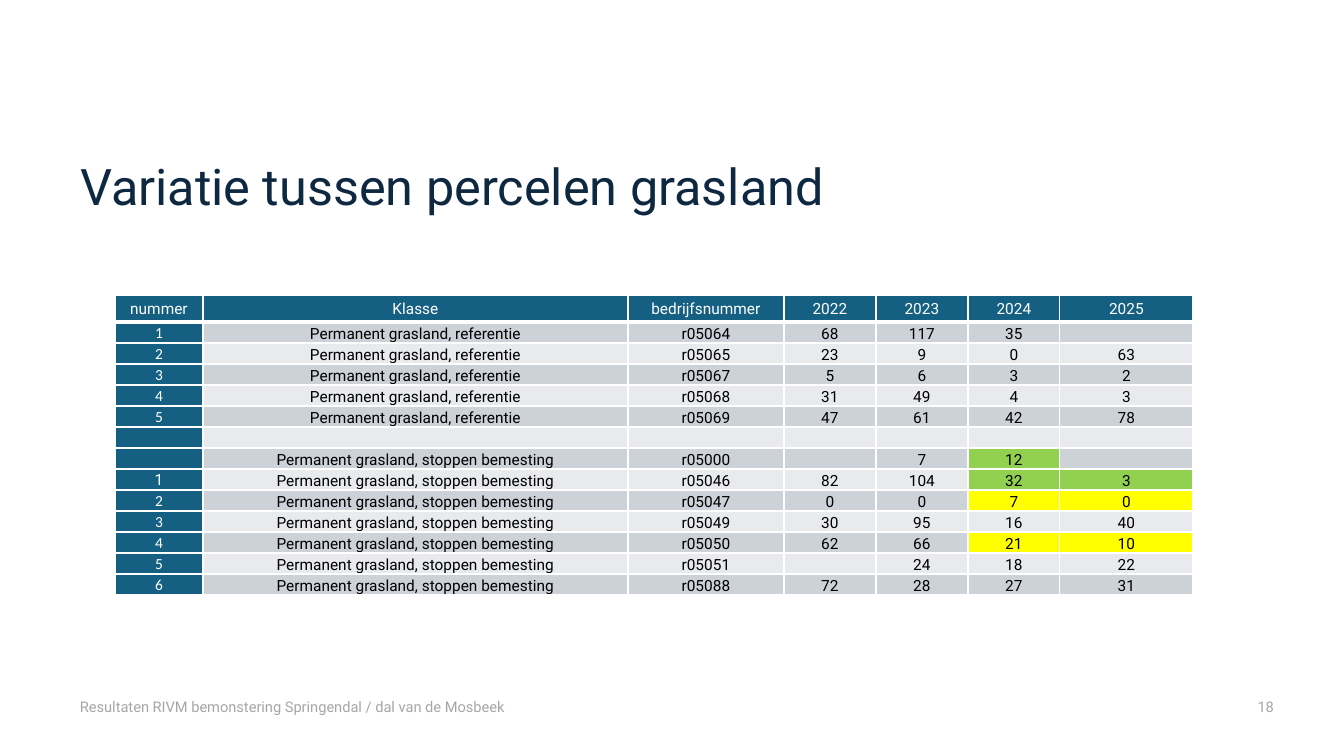
from pptx import Presentation
from pptx.dml.color import RGBColor
from pptx.enum.text import MSO_ANCHOR as ANCHOR, PP_ALIGN as ALIGN
from pptx.oxml import parse_xml
from pptx.oxml.ns import nsdecls
from pptx.util import Emu, Pt

COLORS = {
    "title": "0E2841", "footer": "A6A6A6", "head": "156082",
    "white": "FFFFFF", "black": "000000", "odd": "CCD2D8",
    "even": "E8EAED", "green": "92D050", "yellow": "FFFF00",
}
REFERENCE = "Permanent grasland, referentie"
STOPPED = "Permanent grasland, stoppen bemesting"
ROWS = [
    ["nummer", "Klasse", "bedrijfsnummer", "2022", "2023", "2024", "2025"],
    ["1", REFERENCE, "r05064", "68", "117", "35", ""],
    ["2", REFERENCE, "r05065", "23", "9", "0", "63"],
    ["3", REFERENCE, "r05067", "5", "6", "3", "2"],
    ["4", REFERENCE, "r05068", "31", "49", "4", "3"],
    ["5", REFERENCE, "r05069", "47", "61", "42", "78"],
    [""] * 7,
    ["", STOPPED, "r05000", "", "7", "12", ""],
    ["1", STOPPED, "r05046", "82", "104", "32", "3"],
    ["2", STOPPED, "r05047", "0", "0", "7", "0"],
    ["3", STOPPED, "r05049", "30", "95", "16", "40"],
    ["4", STOPPED, "r05050", "62", "66", "21", "10"],
    ["5", STOPPED, "r05051", "", "24", "18", "22"],
    ["6", STOPPED, "r05088", "72", "28", "27", "31"],
]
HIGHLIGHTS = {
    (7, 5): "green", (8, 5): "green", (8, 6): "green",
    (9, 5): "yellow", (9, 6): "yellow", (11, 5): "yellow", (11, 6): "yellow",
}
COL_WIDTHS = [88, 425, 156, 92, 92, 92, 133]
HEAD_HEIGHT, ROW_HEIGHT = 27, 21
ROBOTO_NUMBER_ROW = 8


def px(n):
    """Convert pixels, 100.8 to the inch, to EMU."""
    return Emu(round(n * 914400 / 100.8))


def rgb(name):
    return RGBColor.from_string(COLORS[name])


def style(p, size, color, font="Roboto", align=ALIGN.LEFT):
    p.alignment = align
    for r in p.runs:
        r.font.size, r.font.name = Pt(size), font
        r.font.color.rgb = rgb(color)


def add_title(s, box, text):
    sp = s.shapes.title
    sp.left, sp.top, sp.width, sp.height = map(px, box)
    tf = sp.text_frame
    tf.text = text
    tf.vertical_anchor = ANCHOR.BOTTOM
    p = tf.paragraphs[0]
    p.line_spacing = 0.9
    style(p, 36, "title")


def add_footer(s, box, text, align=ALIGN.LEFT):
    tf = s.shapes.add_textbox(*map(px, box)).text_frame
    tf.word_wrap = True
    tf.vertical_anchor = ANCHOR.BOTTOM
    if align == ALIGN.RIGHT:
        tf.margin_right = 0
    tf.text = text
    style(tf.paragraphs[0], 10.5, "footer", align=align)


def add_borders(cell, bottom):
    """Draw white cell borders, 1 pt wide except for the bottom one."""
    tc_pr = cell._tc.get_or_add_tcPr()
    for i, (side, width) in enumerate(zip("LRTB", (1, 1, 1, bottom))):
        tc_pr.insert(i, parse_xml(
            f'<a:ln{side} {nsdecls("a")} w="{Pt(width)}"><a:solidFill>'
            f'<a:srgbClr val="{COLORS["white"]}"/></a:solidFill></a:ln{side}>'))


def fill_cell(cell, row, col, text):
    is_head = row == 0 or col == 0
    band = "head" if is_head else "odd" if row % 2 else "even"
    cell.fill.solid()
    cell.fill.fore_color.rgb = rgb(HIGHLIGHTS.get((row, col), band))
    add_borders(cell, 3 if row == 0 else 1)
    cell.margin_left = cell.margin_right = px(5 if is_head else 1)
    cell.margin_top = px(0 if is_head else 1)
    cell.margin_bottom = 0
    cell.vertical_anchor = ANCHOR.MIDDLE if is_head else ANCHOR.BOTTOM
    p = cell.text_frame.paragraphs[0]
    if not text:
        p._p.append(parse_xml(f'<a:endParaRPr {nsdecls("a")} sz="1100"/>'))
        return
    p.text = text
    if is_head:
        p.line_spacing, p.space_after = 1.07, Pt(8)
    is_calibri = col == 0 and row not in (0, ROBOTO_NUMBER_ROW)
    style(p, 11, "white" if is_head else "black",
          "Calibri" if is_calibri else "Roboto", ALIGN.CENTER)


def add_parcel_table(s, left, top):
    heights = [HEAD_HEIGHT] + [ROW_HEIGHT] * (len(ROWS) - 1)
    box = (left, top, sum(COL_WIDTHS), sum(heights))
    table = s.shapes.add_table(len(ROWS), len(COL_WIDTHS), *map(px, box)).table
    table.first_row = table.horz_banding = False
    for column, width in zip(table.columns, COL_WIDTHS):
        column.width = px(width)
    for i, (values, height) in enumerate(zip(ROWS, heights)):
        table.rows[i].height = px(height)
        for j, text in enumerate(values):
            fill_cell(table.cell(i, j), i, j, text)


def main():
    prs = Presentation()
    prs.slide_width, prs.slide_height = px(1344), px(756)
    s = prs.slides.add_slide(prs.slide_layouts[5])
    add_title(s, (70, 116, 1204, 105), "Variatie tussen percelen grasland")
    add_parcel_table(s, 115, 295)
    add_footer(s, (70, 685, 602, 35),
               "Resultaten RIVM bemonstering Springendal / dal van de Mosbeek")
    add_footer(s, (723, 685, 551, 35), "18", ALIGN.RIGHT)
    prs.save("out.pptx")


if __name__ == "__main__":
    main()
